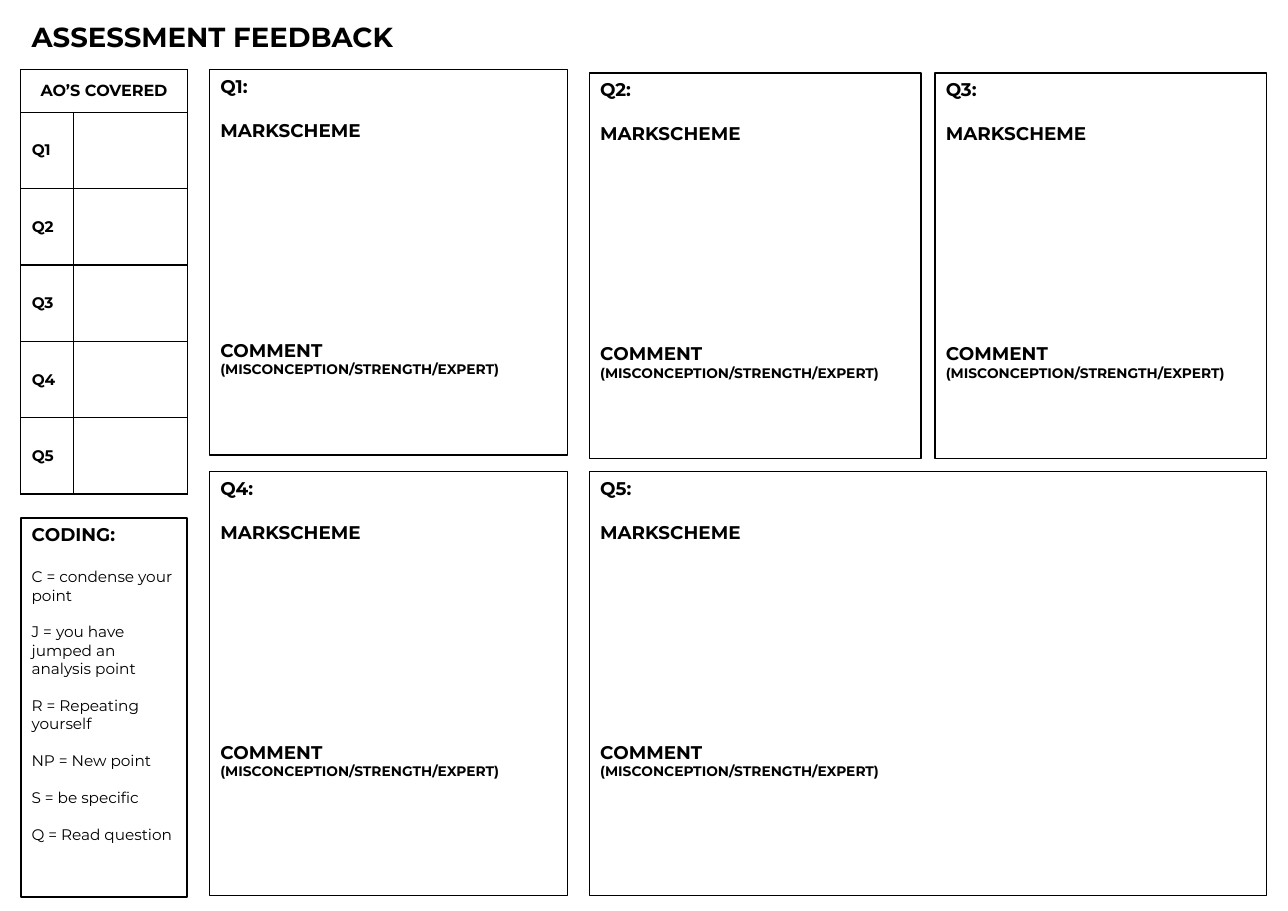
"""Build a one-page assessment feedback sheet."""
from lxml.etree import SubElement
from pptx import Presentation
from pptx.dml.color import RGBColor
from pptx.enum.shapes import MSO_SHAPE as Shape
from pptx.enum.text import MSO_ANCHOR as Anchor, PP_ALIGN as Align
from pptx.oxml.ns import qn
from pptx.util import Cm, Pt

BLACK = RGBColor(0, 0, 0)
WHITE = RGBColor(255, 255, 255)
FONT = "Montserrat"

TITLE = "ASSESSMENT FEEDBACK"
HEAD = "AO’S COVERED"
ROWS = ["Q1", "Q2", "Q3", "Q4", "Q5"]
CODES = [
    "C = condense your point",
    "J = you have jumped an analysis point",
    "R = Repeating yourself",
    "NP = New point",
    "S = be specific",
    "Q = Read question",
]
PARTS = [
    ("MARKSCHEME", 12, True, 14.4),
    ("COMMENT", 12, True, 129.4),
    ("(MISCONCEPTION/STRENGTH/EXPERT)", 9, True, 0),
]
LEFT, TOP = 0.48, 1.6
COLS = [1.22, 2.62]
HIGH = [0.99] + [1.76] * len(ROWS)
WIDE = sum(COLS)
PANELS = {
    "Q1:": (4.83, TOP, 8.26, 8.89),
    "Q2:": (13.59, 1.68, 7.65, 8.89),
    "Q3:": (21.56, 1.68, 7.65, 8.89),
    "Q4:": (4.83, 10.87, 8.26, 9.78),
    "Q5:": (13.59, 10.87, 15.62, 9.78),
}


def write(frame, lines):
    """Fill a frame with (text, size, bold, space before) lines."""
    frame.word_wrap = True
    frame.text = "\n".join(line[0] for line in lines)
    for para, (_, size, bold, gap) in zip(frame.paragraphs, lines):
        para.alignment = Align.LEFT
        para.space_before = Pt(gap)
        for run in para.runs:
            font = run.font
            font.name, font.size, font.bold = FONT, Pt(size), bold
            font.color.rgb = BLACK


def panel(slide, place, lines):
    """Draw an outlined box with text from the top."""
    box = slide.shapes.add_shape(Shape.RECTANGLE, *map(Cm, place))
    box.shadow.inherit = False
    box.fill.solid()
    box.fill.fore_color.rgb = WHITE
    box.line.color.rgb = BLACK
    box.line.width = Pt(1)
    box.text_frame.vertical_anchor = Anchor.TOP
    write(box.text_frame, lines)


def border(cell):
    """Give a cell a white fill and black edges."""
    props = cell._tc.get_or_add_tcPr()
    for side in ("a:lnL", "a:lnR", "a:lnT", "a:lnB"):
        edge = SubElement(props, qn(side), w=str(Pt(1)))
        fill = SubElement(edge, qn("a:solidFill"))
        SubElement(fill, qn("a:srgbClr"), val=str(BLACK))
    cell.fill.solid()
    cell.fill.fore_color.rgb = WHITE


def covered(slide):
    """Draw the table of objectives."""
    place = map(Cm, (LEFT, TOP, WIDE, sum(HIGH)))
    table = slide.shapes.add_table(len(HIGH), len(COLS), *place).table
    for col, width in zip(table.columns, COLS):
        col.width = Cm(width)
    for row, height in zip(table.rows, HIGH):
        row.height = Cm(height)
    for cell in table.iter_cells():
        border(cell)
        cell.vertical_anchor = Anchor.MIDDLE
    head = table.cell(0, 0)
    head.merge(table.cell(0, 1))
    write(head.text_frame, [(HEAD, 10.5, True, 0)])
    head.text_frame.paragraphs[0].alignment = Align.CENTER
    for i, name in enumerate(ROWS, 1):
        write(table.cell(i, 0).text_frame, [(name, 10, True, 0)])


def main():
    """Lay out the sheet and save it."""
    deck = Presentation()
    deck.slide_width, deck.slide_height = Cm(29.7), Cm(21)
    slide = deck.slides.add_slide(deck.slide_layouts[6])
    title = slide.shapes.add_textbox(Cm(LEFT), Cm(0.33), Cm(28.98), Cm(1.02))
    write(title.text_frame, [(TITLE, 18, True, 0)])
    covered(slide)
    codes = [(code, 10, False, 12 if i else 14.4) for i, code in enumerate(CODES)]
    panel(slide, (LEFT, 11.94, WIDE, 8.74), [("CODING:", 12, True, 0)] + codes)
    for name, place in PANELS.items():
        panel(slide, place, [(name, 12, True, 0)] + PARTS)
    deck.save("out.pptx")


if __name__ == "__main__":
    main()
